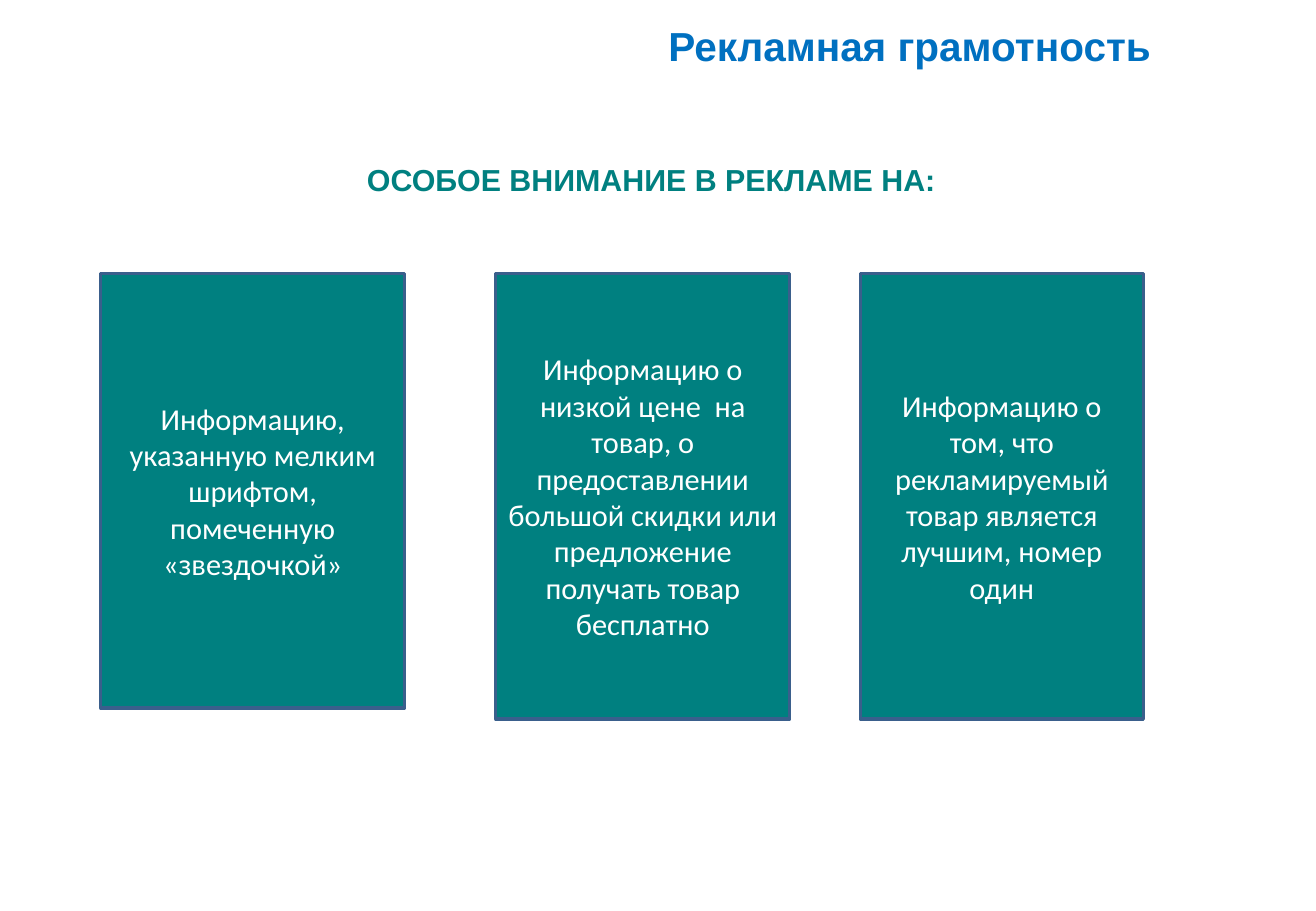
from pptx import Presentation
from pptx.dml.color import RGBColor
from pptx.enum.shapes import MSO_SHAPE
from pptx.enum.text import MSO_ANCHOR, MSO_AUTO_SIZE, PP_ALIGN
from pptx.util import Inches, Pt

RECTANGLE = MSO_SHAPE.RECTANGLE
TOP, MIDDLE = MSO_ANCHOR.TOP, MSO_ANCHOR.MIDDLE
LEFT, CENTER = PP_ALIGN.LEFT, PP_ALIGN.CENTER
NO_AUTOFIT = MSO_AUTO_SIZE.NONE

BLUE, TEAL, BORDER, WHITE = "0070C0", "008080", "3A5F8C", "FFFFFF"

CARD_TOP = 2.25
# left, width, height, text
CARDS = [
    (0.83, 2.5, 3.58,
     "Информацию, указанную мелким шрифтом, помеченную «звездочкой»"),
    (4.08, 2.42, 3.67,
     "Информацию о низкой цене  на товар, о предоставлении большой скидки "
     "или предложение получать товар бесплатно"),
    (7.08, 2.33, 3.67,
     "Информацию о том, что рекламируемый товар является лучшим, номер один"),
]


def color(hex_string):
    return RGBColor.from_string(hex_string)


def write_text(shape, text, size, font_name, font_color, bold, alignment, anchor):
    frame = shape.text_frame
    frame.word_wrap = True
    frame.auto_size = NO_AUTOFIT
    frame.vertical_anchor = anchor
    frame.text = text
    paragraph = frame.paragraphs[0]
    paragraph.alignment = alignment
    paragraph.font.size = Pt(size)
    paragraph.font.name = font_name
    paragraph.font.bold = bold
    paragraph.font.color.rgb = color(font_color)


def remove_margins(shape):
    frame = shape.text_frame
    frame.margin_left = frame.margin_right = 0
    frame.margin_top = frame.margin_bottom = 0


def place_title(slide, left, top, width, height):
    title = slide.shapes.title
    title.left, title.top = Inches(left), Inches(top)
    title.width, title.height = Inches(width), Inches(height)
    remove_margins(title)
    write_text(title, "Рекламная грамотность", 24, "Arial", BLUE, True, LEFT, TOP)


def add_heading(slide, left, top, width, height):
    heading = slide.shapes.add_textbox(
        Inches(left), Inches(top), Inches(width), Inches(height))
    remove_margins(heading)
    write_text(heading, "ОСОБОЕ ВНИМАНИЕ В РЕКЛАМЕ НА:", 18, "Arial", TEAL,
               True, CENTER, TOP)


def add_card(slide, left, top, width, height, text):
    card = slide.shapes.add_shape(
        RECTANGLE, Inches(left), Inches(top), Inches(width), Inches(height))
    card.shadow.inherit = False
    card.fill.solid()
    card.fill.fore_color.rgb = color(TEAL)
    card.line.color.rgb = color(BORDER)
    card.line.width = Pt(2)
    write_text(card, text, 18, "Calibri", WHITE, False, CENTER, MIDDLE)


def main():
    presentation = Presentation()
    presentation.slide_width = Inches(10.83)
    presentation.slide_height = Inches(7.5)
    title_only = presentation.slide_layouts.get_by_name("Title Only")
    slide = presentation.slides.add_slide(title_only)
    place_title(slide, 5.5, 0.17, 5, 0.42)
    add_heading(slide, 0.25, 1.33, 10.22, 0.4)
    for left, width, height, text in CARDS:
        add_card(slide, left, CARD_TOP, width, height, text)
    presentation.save("out.pptx")


if __name__ == "__main__":
    main()
